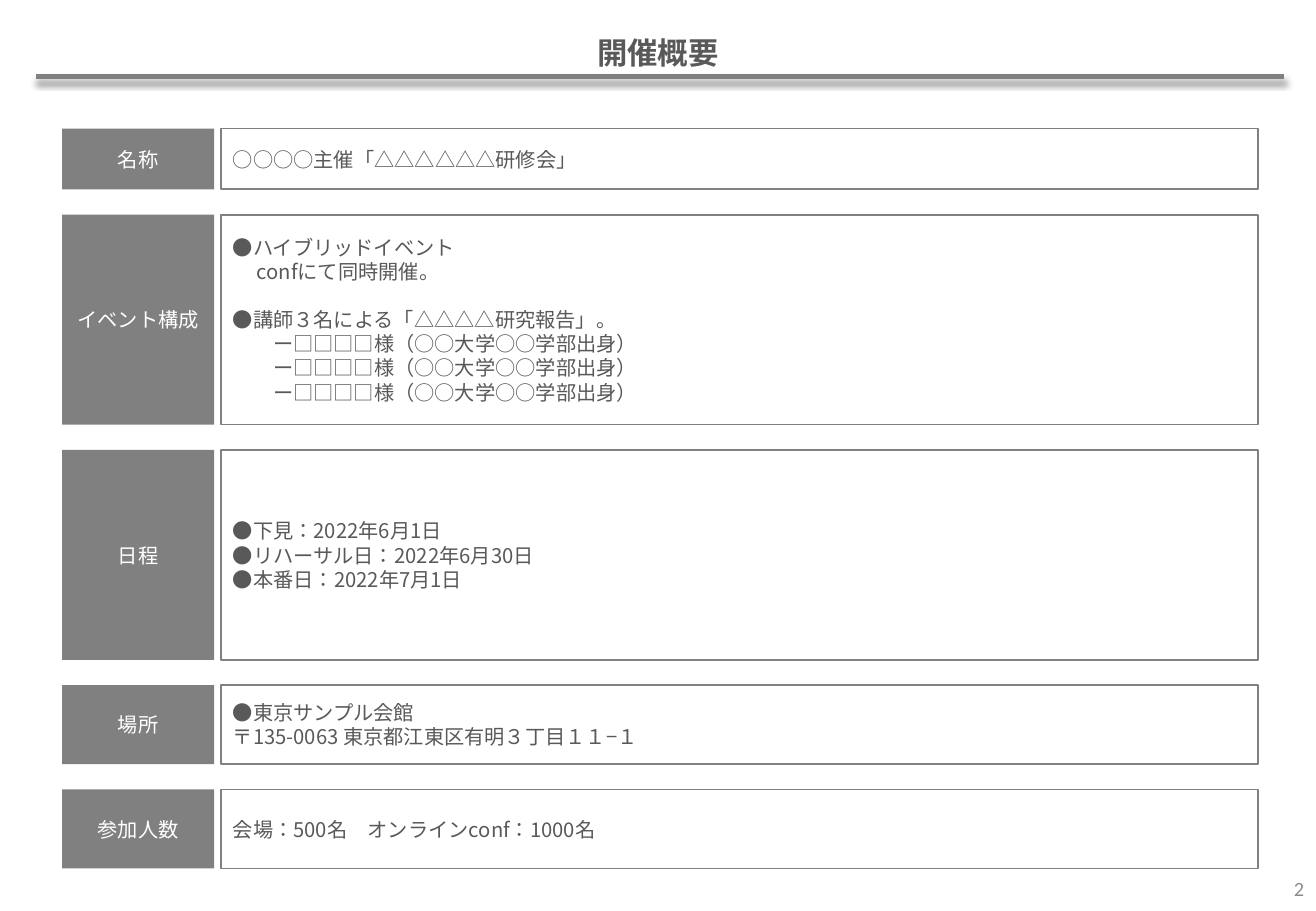
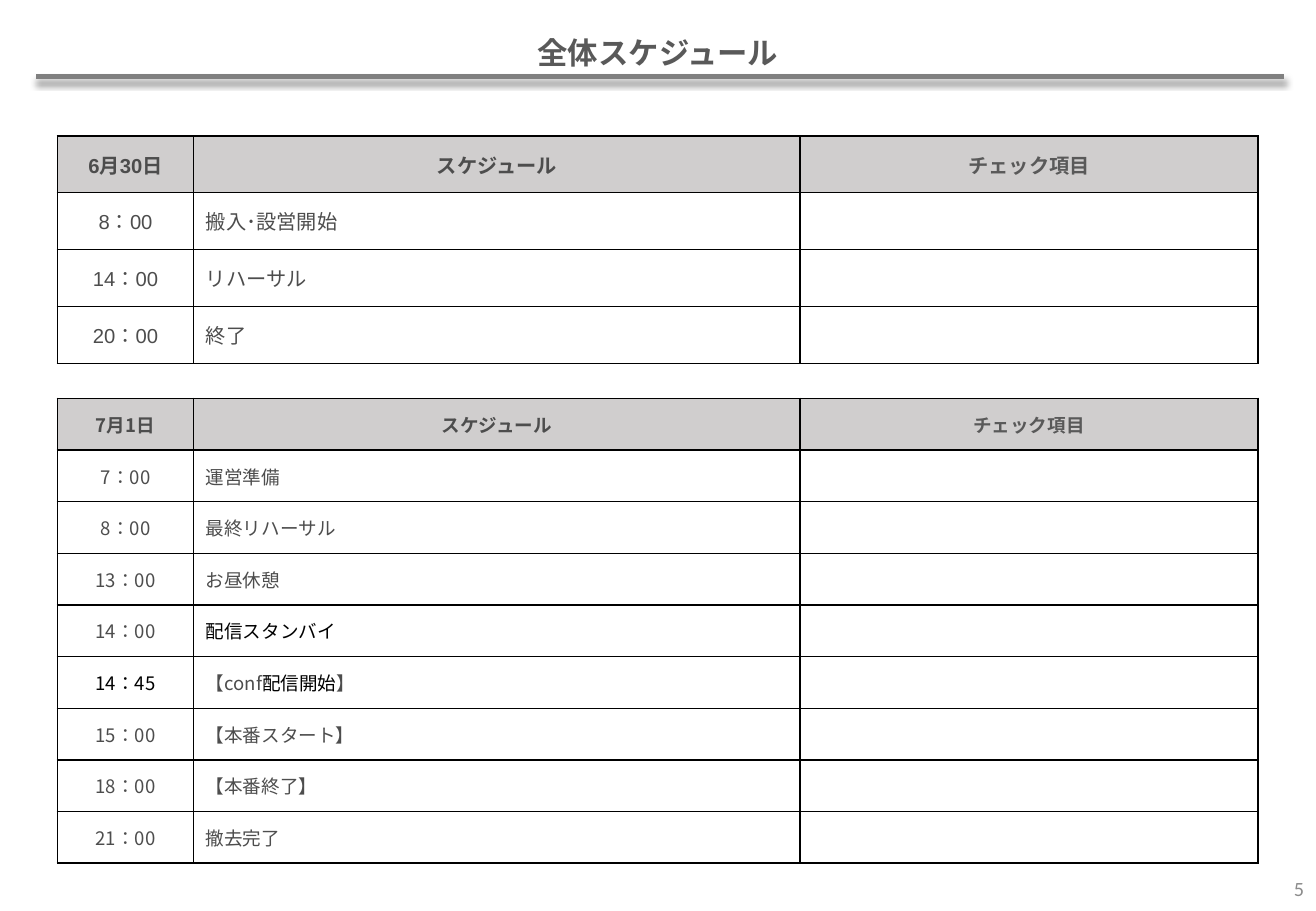
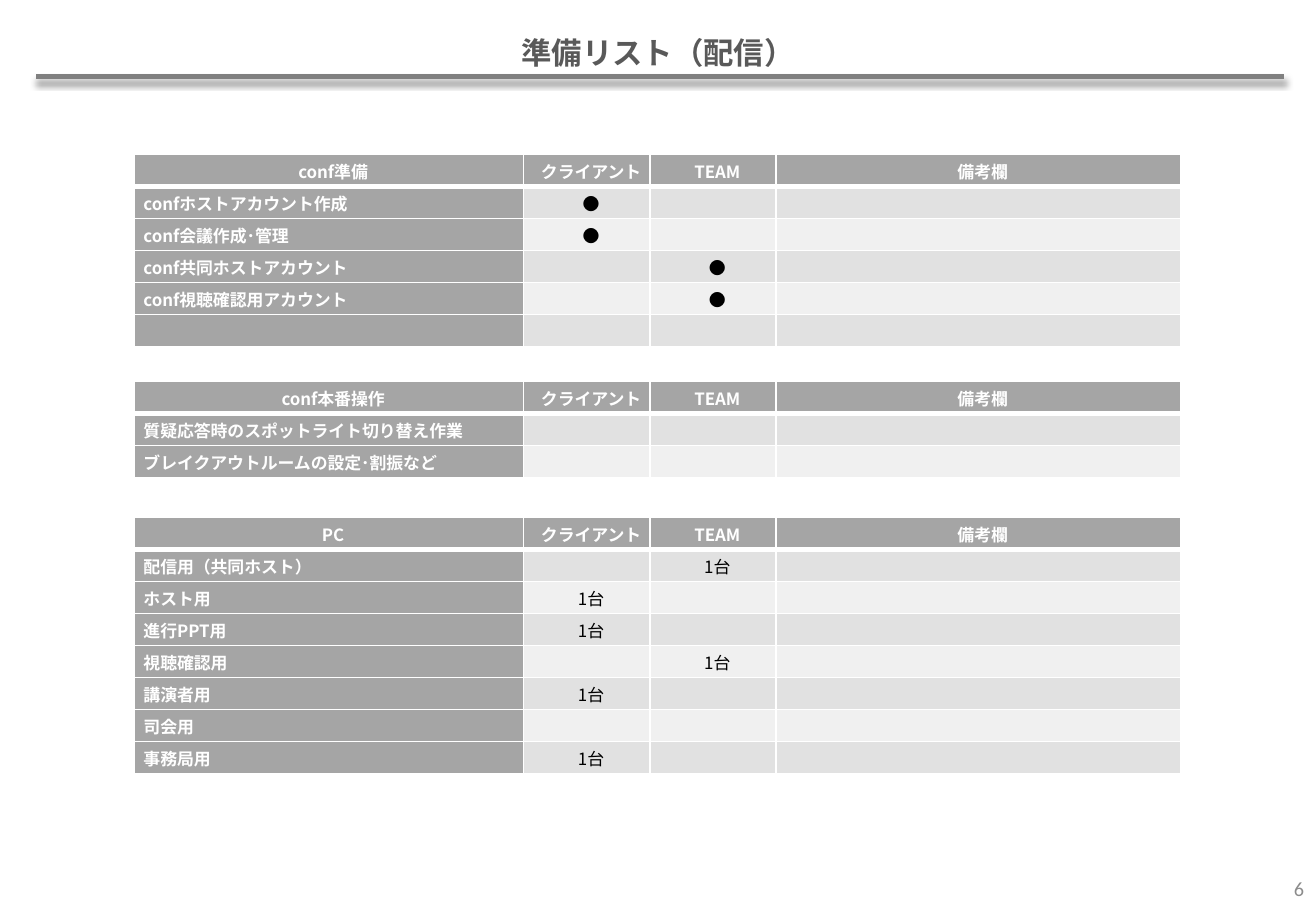
"""Build three event-planning slides: overview, schedule and streaming checklist."""
from lxml import etree
from pptx import Presentation
from pptx.dml.color import RGBColor
from pptx.enum.lang import MSO_LANGUAGE_ID
from pptx.enum.shapes import MSO_CONNECTOR, MSO_SHAPE
from pptx.enum.text import MSO_ANCHOR, PP_ALIGN
from pptx.oxml.ns import qn
from pptx.util import Cm, Pt

LEFT, CENTER, RIGHT = PP_ALIGN.LEFT, PP_ALIGN.CENTER, PP_ALIGN.RIGHT
MIDDLE = MSO_ANCHOR.MIDDLE
RECTANGLE = MSO_SHAPE.RECTANGLE
STRAIGHT = MSO_CONNECTOR.STRAIGHT
JAPANESE = MSO_LANGUAGE_ID.JAPANESE
TITLE_ONLY = 5

COLORS = {
    "rule": "808080", "text": "595959", "cell": "4D4D4D", "number": "8C8C8C",
    "white": "FFFFFF", "black": "000000", "schedule_head": "D0CECE",
    "list_head": "A5A5A5", "band_dark": "E1E1E1", "band_light": "F0F0F0",
}
JAPANESE_FONT = "Noto Sans CJK JP"
TITLE_FONT = "Calibri"
SLIDE_WIDTH, SLIDE_HEIGHT = 27.52, 19.05

OVERVIEW = [
    ("名称", 1.27, [("○○○○主催「△△△△△△研修会」", 0, 0)]),
    ("イベント構成", 4.39, [
        ("●ハイブリッドイベント", 0, 0),
        ("confにて同時開催。", 0.5, 0),
        ("●講師３名による「△△△△研究報告」。", 0, 14),
    ] + [("ー□□□□様（○○大学○○学部出身）", 0.84, 0)] * 3),
    ("日程", 4.39, [
        ("●下見：2022年6月1日", 0, 0),
        ("●リハーサル日：2022年6月30日", 0, 0),
        ("●本番日：2022年7月1日", 0, 0),
    ]),
    ("場所", 1.65, [
        ("●東京サンプル会館", 0, 0),
        ("〒135-0063 東京都江東区有明３丁目１１−１", 0, 0),
    ]),
    ("参加人数", 1.65, [("会場：500名　オンラインconf：1000名", 0, 0)]),
]
OVERVIEW_TOP, OVERVIEW_GAP = 2.69, 0.53

SCHEDULE_WIDTHS = [2.85, 12.68, 9.58]
SCHEDULE_HEAD = ["スケジュール", [("チェック項目", "text")]]
SCHEDULES = [
    {"top": 2.84, "row_height": 1.19, "size": 12, "font": "Arial", "day": "6月30日",
     "items": [("8：00", "搬入･設営開始"), ("14：00", "リハーサル"), ("20：00", "終了")]},
    {"top": 8.33, "row_height": 1.08, "size": 11, "font": JAPANESE_FONT, "day": "7月1日",
     "items": [
         ("7：00", "運営準備"),
         ("8：00", "最終リハーサル"),
         ("13：00", "お昼休憩"),
         ("14：00", [("配信スタンバイ", "black")]),
         ([("14：45", "black")],
          [("【conf", "cell"), ("配信開始", "black"), ("】", "cell")]),
         ("15：00", "【本番スタート】"),
         ("18：00", "【本番終了】"),
         ("21：00", "撤去完了"),
     ]},
]

LIST_WIDTHS = [8.15, 2.64, 2.64, 8.46]
LIST_HEAD = ["クライアント", "TEAM", "備考欄"]
CHECKLISTS = [
    (3.23, "conf準備", [
        ("confホストアカウント作成", "●", ""),
        ("conf会議作成･管理", "●", ""),
        ("conf共同ホストアカウント", "", "●"),
        ("conf視聴確認用アカウント", "", "●"),
        ("", "", ""),
    ]),
    (7.98, "conf本番操作", [
        ("質疑応答時のスポットライト切り替え作業", "", ""),
        ("ブレイクアウトルームの設定･割振など", "", ""),
    ]),
    (10.82, "PC", [
        ("配信用（共同ホスト）", "", "1台"),
        ("ホスト用", "1台", ""),
        ("進行PPT用", "1台", ""),
        ("視聴確認用", "", "1台"),
        ("講演者用", "1台", ""),
        ("司会用", "", ""),
        ("事務局用", "1台", ""),
    ]),
]


def rgb(name):
    return RGBColor.from_string(COLORS[name])


def format_run(run, size, color, font=JAPANESE_FONT, bold=False):
    run.font.size = Pt(size)
    run.font.bold = bold
    run.font.name = font
    run.font.color.rgb = rgb(color)
    run.font.language_id = JAPANESE
    etree.SubElement(run.font._element, qn("a:ea"), typeface=JAPANESE_FONT)


def write(text_frame, text, size, color, align, font=JAPANESE_FONT, bold=False):
    text_frame.text = text
    paragraph = text_frame.paragraphs[0]
    paragraph.alignment = align
    format_run(paragraph.runs[0], size, color, font, bold)


def add_title_rule(slide):
    """Draw the shadowed rule and move it to the layout that all slides share."""
    rule = slide.shapes.add_connector(STRAIGHT, Cm(0.76), Cm(1.6), Cm(26.85), Cm(1.6))
    rule.line.color.rgb = rgb("rule")
    rule.line.width = Pt(3)
    effects = etree.SubElement(rule.element.spPr, qn("a:effectLst"))
    shadow = etree.SubElement(effects, qn("a:outerShdw"), blurRad=str(Pt(4)),
                              dist=str(Pt(3)), dir="5400000", rotWithShape="0")
    tint = etree.SubElement(shadow, qn("a:srgbClr"), val=COLORS["black"])
    etree.SubElement(tint, qn("a:alpha"), val="40000")
    slide.slide_layout.shapes.element.append(rule.element)


def add_slide(presentation, title, number):
    slide = presentation.slides.add_slide(presentation.slide_layouts[TITLE_ONLY])
    heading = slide.shapes.title
    heading.left, heading.top = Cm(0), Cm(0.58)
    heading.width, heading.height = Cm(SLIDE_WIDTH), Cm(1.02)
    heading.text_frame.vertical_anchor = MIDDLE
    write(heading.text_frame, title, 18, "text", CENTER, TITLE_FONT, True)
    box = slide.shapes.add_textbox(Cm(21.33), Cm(18.06), Cm(6.19), Cm(1.02))
    box.text_frame.word_wrap = True
    box.text_frame.vertical_anchor = MIDDLE
    write(box.text_frame, str(number), 12, "number", RIGHT, TITLE_FONT)
    return slide


def add_box(slide, left, top, width, height):
    box = slide.shapes.add_shape(RECTANGLE, Cm(left), Cm(top), Cm(width), Cm(height))
    box.shadow.inherit = False
    box.text_frame.word_wrap = True
    box.text_frame.vertical_anchor = MIDDLE
    return box


def add_overview(slide):
    top = OVERVIEW_TOP
    for name, height, lines in OVERVIEW:
        label = add_box(slide, 1.3, top, 3.18, height)
        label.fill.solid()
        label.fill.fore_color.rgb = rgb("rule")
        label.line.fill.background()
        write(label.text_frame, name, 12, "white", CENTER)

        body = add_box(slide, 4.62, top, 21.69, height)
        body.fill.background()
        body.line.color.rgb = rgb("rule")
        body.line.width = Pt(1)
        body.text_frame.text = "\n".join(text for text, _, _ in lines)
        for paragraph, (_, indent, space) in zip(body.text_frame.paragraphs, lines):
            paragraph.alignment = LEFT
            paragraph.space_before = Pt(space)
            paragraph._p.get_or_add_pPr().set("marL", str(Cm(indent)))
            format_run(paragraph.runs[0], 12, "text")
        top += height + OVERVIEW_GAP


def set_borders(cell, color, top=1, bottom=1):
    properties = cell._tc.get_or_add_tcPr()
    for side, width in (("L", 1), ("R", 1), ("T", top), ("B", bottom)):
        line = etree.SubElement(properties, qn(f"a:ln{side}"), w=str(Pt(width)))
        fill = etree.SubElement(line, qn("a:solidFill"))
        etree.SubElement(fill, qn("a:srgbClr"), val=COLORS[color])


def fill_cell(cell, content, size, color, align, font=JAPANESE_FONT, bold=False):
    """Write a string, or a list of (text, colour) pairs, into a cell."""
    cell.vertical_anchor = MIDDLE
    paragraph = cell.text_frame.paragraphs[0]
    paragraph.alignment = align
    if not content:
        etree.SubElement(paragraph._p, qn("a:endParaRPr"), sz=str(size * 100))
        return
    pieces = [(content, color)] if isinstance(content, str) else content
    for text, piece_color in pieces:
        run = paragraph.add_run()
        run.text = text
        format_run(run, size, piece_color, font, bold)


def add_table(slide, left, top, widths, row_height, row_count):
    frame = slide.shapes.add_table(row_count, len(widths), Cm(left), Cm(top),
                                   Cm(sum(widths)), Cm(row_height * row_count))
    table = frame.table
    table.first_row = table.horz_banding = False
    for column, width in zip(table.columns, widths):
        column.width = Cm(width)
    for row in table.rows:
        row.height = Cm(row_height)
    return table


def add_schedule(slide, schedule):
    rows = [[schedule["day"], *SCHEDULE_HEAD]]
    rows += [[time, task, ""] for time, task in schedule["items"]]
    table = add_table(slide, 1.2, schedule["top"], SCHEDULE_WIDTHS,
                      schedule["row_height"], len(rows))
    for row_index, row in enumerate(rows):
        is_head = row_index == 0
        for column_index, content in enumerate(row):
            cell = table.cell(row_index, column_index)
            set_borders(cell, "black")
            if is_head:
                cell.fill.solid()
                cell.fill.fore_color.rgb = rgb("schedule_head")
            else:
                cell.fill.background()
            align = CENTER if is_head or column_index == 0 else LEFT
            fill_cell(cell, content, schedule["size"], "cell", align,
                      schedule["font"], is_head)


def add_checklist(slide, top, name, items):
    rows = [[name, *LIST_HEAD]] + [[*item, ""] for item in items]
    table = add_table(slide, 2.8, top, LIST_WIDTHS, 0.67, len(rows))
    for row_index, row in enumerate(rows):
        is_head = row_index == 0
        band = "band_dark" if row_index % 2 else "band_light"
        for column_index, content in enumerate(row):
            cell = table.cell(row_index, column_index)
            is_label = is_head or column_index == 0
            set_borders(cell, "white", top=3 if row_index == 1 else 1,
                        bottom=3 if is_head else 1)
            cell.fill.solid()
            cell.fill.fore_color.rgb = rgb("list_head" if is_label else band)
            cell.margin_left = Cm(0.2)
            cell.margin_top = cell.margin_right = Cm(0.02)
            cell.margin_bottom = Cm(0)
            align = CENTER if is_head or column_index else LEFT
            fill_cell(cell, content, 10, "white" if is_label else "black", align,
                      bold=is_label)


def main():
    presentation = Presentation()
    presentation.slide_width = Cm(SLIDE_WIDTH)
    presentation.slide_height = Cm(SLIDE_HEIGHT)

    overview = add_slide(presentation, "開催概要", 2)
    add_title_rule(overview)
    add_overview(overview)

    timetable = add_slide(presentation, "全体スケジュール", 5)
    for schedule in SCHEDULES:
        add_schedule(timetable, schedule)

    preparation = add_slide(presentation, "準備リスト（配信）", 6)
    for top, name, items in CHECKLISTS:
        add_checklist(preparation, top, name, items)

    presentation.save("out.pptx")


if __name__ == "__main__":
    main()
